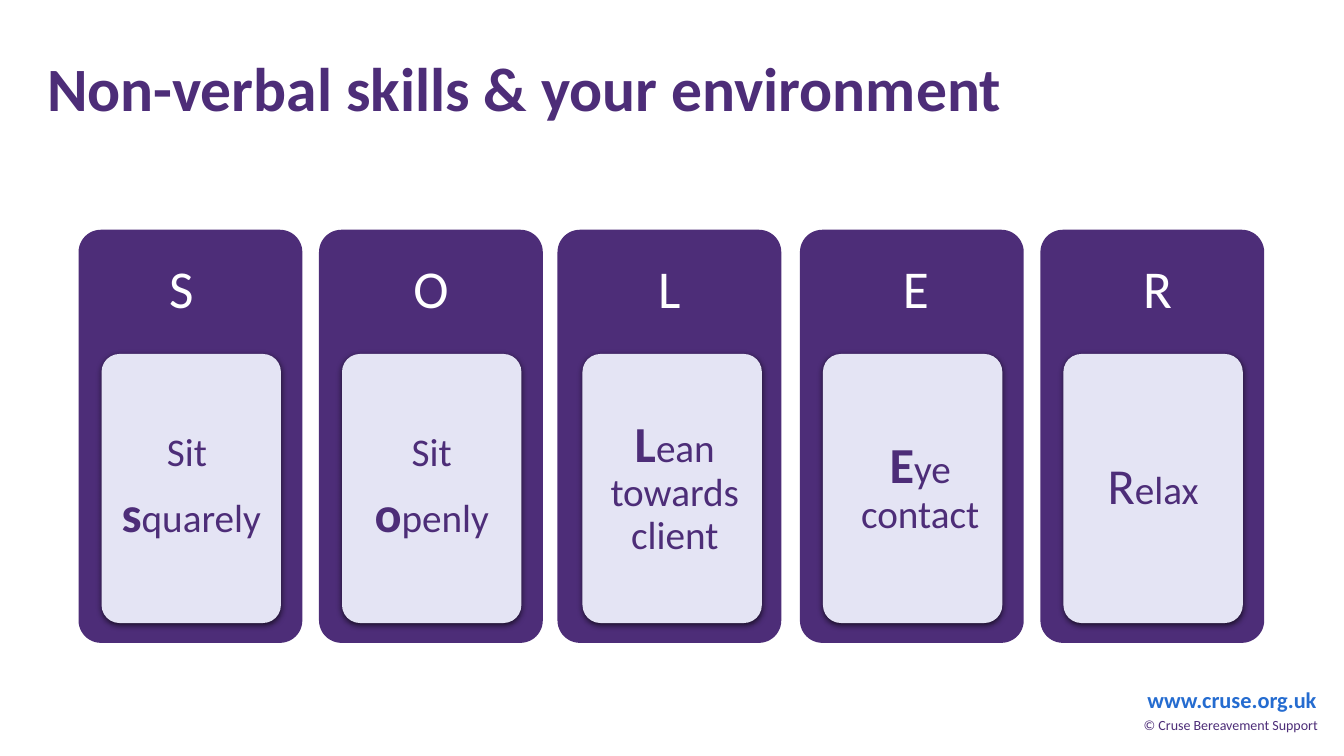
from dataclasses import dataclass

from lxml import etree
from pptx import Presentation
from pptx.dml.color import RGBColor
from pptx.enum import shapes, text
from pptx.oxml import ns
from pptx.util import Cm, Pt


@dataclass(frozen=True)
class Theme:
    font: str = "Calibri"
    plum: str = "4D2D78"
    pale: str = "E4E4F4"
    white: str = "FFFFFF"
    link: str = "256CD0"
    head: int = 44
    big: int = 38
    cap: int = 36
    body: int = 28
    web: int = 16
    small: int = 10


@dataclass(frozen=True)
class Span:
    words: str
    size: int
    color: str = Theme.plum
    bold: bool = False


@dataclass(frozen=True)
class Box:
    left: float
    top: float
    width: float
    height: float

    def place(self) -> tuple:
        return Cm(self.left), Cm(self.top), Cm(self.width), Cm(self.height)


@dataclass(frozen=True)
class Card:
    letter: str
    lines: list
    shift: float = 0    # letter offset from the column centre
    nudge: float = 0    # column offset from the even pitch
    indent: float = 0


T = Theme()
PITCH = 6.06


def write(frame, lines: list, align=text.PP_ALIGN.CENTER, pad: tuple = (0.25, 0.13),
          anchor=text.MSO_ANCHOR.MIDDLE, space: float = 0.9, indent: float = 0) -> None:
    frame.word_wrap = True
    frame.auto_size = text.MSO_AUTO_SIZE.NONE
    frame.vertical_anchor = anchor
    frame.margin_left = frame.margin_right = Cm(pad[0])
    frame.margin_top = frame.margin_bottom = Cm(pad[1])
    for i, spans in enumerate(lines):
        para = frame.paragraphs[0] if i == 0 else frame.add_paragraph()
        para.alignment = align
        para.line_spacing = space
        if indent:
            para._p.get_or_add_pPr().set("marL", str(Cm(indent)))
        if i < len(lines) - 1:
            para.space_after = Pt(9.8)
        for span in spans:
            run = para.add_run()
            run.text = span.words
            font = run.font
            font.name, font.size, font.bold = T.font, Pt(span.size), span.bold
            font.color.rgb = RGBColor.from_string(span.color)


def label(slide, box: Box, lines: list, **style) -> None:
    write(slide.shapes.add_textbox(*box.place()).text_frame, lines, **style)


def panel(slide, box: Box, color: str, shade: bool = False) -> None:
    form = slide.shapes.add_shape(shapes.MSO_SHAPE.ROUNDED_RECTANGLE, *box.place())
    form.adjustments[0] = 0.1
    form.fill.solid()
    form.fill.fore_color.rgb = RGBColor.from_string(color)
    form.line.fill.background()
    form.shadow.inherit = False
    if shade:
        glow = form._element.spPr.find(ns.qn("a:effectLst"))
        drop = etree.SubElement(glow, ns.qn("a:outerShdw"), blurRad=str(Pt(4.5)),
                                dist=str(Pt(1.5)), dir="5400000", algn="ctr", rotWithShape="0")
        tint = etree.SubElement(drop, ns.qn("a:srgbClr"), val="000000")
        etree.SubElement(tint, ns.qn("a:alpha"), val="63000")


def draw(slide, card: Card, i: int) -> None:
    left = 1.98 + i * PITCH
    col = left + card.nudge
    panel(slide, Box(col, 5.79, 5.64, 10.41), T.plum)
    label(slide, Box(col + card.shift, 5.79, 5.64, 3.12),
          [[Span(card.letter, T.big, T.white)]], pad=(0.41, 0.41))
    panel(slide, Box(left + 0.58, 8.92, 4.52, 6.78), T.pale, shade=True)
    label(slide, Box(left + 0.72, 9.05, 4.24, 6.5), card.lines,
          pad=(0.2, 0.15), indent=card.indent)


def lead(cap: str, rest: str, bold: bool = True) -> list:
    return [Span(cap, T.cap, bold=bold), Span(rest, T.body)]


CARDS = [
    Card("S", [[Span("Sit ", T.body)], lead("s", "quarely")], shift=-0.23),
    Card("O", [[Span("Sit", T.body)], lead("o", "penly")]),
    Card("L", [lead("L", "ean towards client")], nudge=-0.05, indent=0.13),
    Card("E", [lead("E", "ye contact")], shift=0.1, indent=0.38),
    Card("R", [lead("R", "elax", bold=False)], shift=0.13),
]


def main() -> None:
    deck = Presentation()
    deck.slide_width, deck.slide_height = Cm(33.87), Cm(19.05)
    slide = deck.slides.add_slide(deck.slide_layouts[5])

    # Title
    title = slide.shapes.title
    title.left, title.top, title.width, title.height = Box(0.94, 0.91, 29.21, 2.79).place()
    write(title.text_frame, [[Span("Non-verbal skills & your environment", T.head, bold=True)]],
          align=text.PP_ALIGN.LEFT)

    # Five cards
    for i, card in enumerate(CARDS):
        draw(slide, card, i)

    # Footer
    top = text.MSO_ANCHOR.TOP
    label(slide, Box(28.6, 17.17, 4.9, 0.94),
          [[Span("www.cruse.org.uk", T.web, T.link, True)]], anchor=top, space=1.0)
    label(slide, Box(28.45, 17.93, 5.13, 1.12),
          [[Span("© Cruse Bereavement Support", T.small)]], anchor=top, space=1.0)

    deck.save("out.pptx")


if __name__ == "__main__":
    main()
